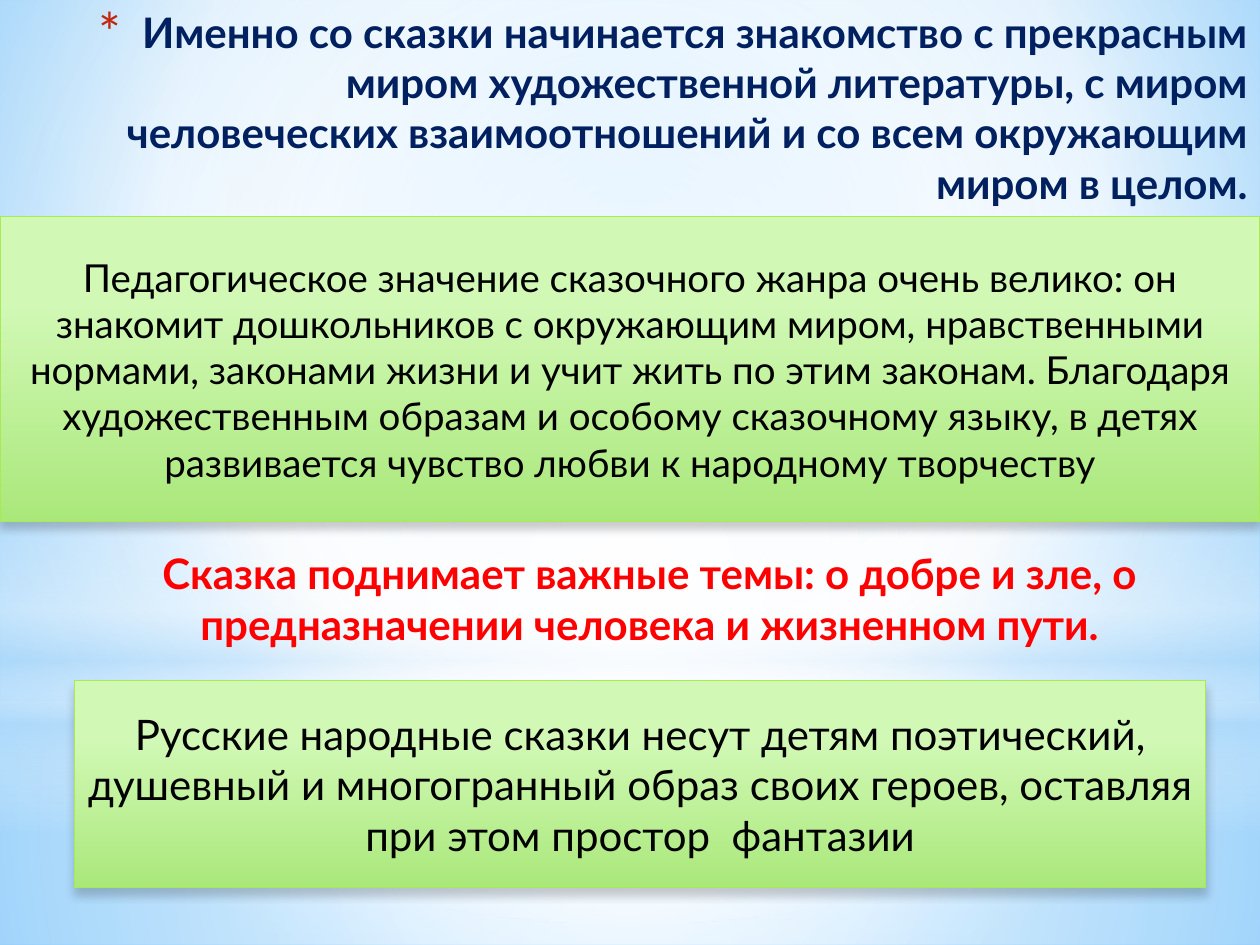
from lxml import etree
from pptx import Presentation
from pptx import util as u
from pptx.dml.color import RGBColor
from pptx.enum import shapes, text
from pptx.oxml.ns import qn

COLORS = {
    "navy": "002060", "red": "FF0000", "black": "000000", "white": "FFFFFF",
    "bullet": "C3260C", "pale": "B4DCFA", "sky": "9ED5FF", "blue": "5BB9FF",
    "green_top": "D1F8B5", "green_bottom": "AAE87B", "green_line": "A7EA52",
}
CENTRE = (50, 50, 50, 50)
WIDTH, HEIGHT = 25.4, 19.05


def add_node(parent, tag, **attributes):
    return etree.SubElement(parent, qn(tag), {k: str(v) for k, v in attributes.items()})


def add_color(parent, name, opacity=100):
    color = add_node(parent, "a:srgbClr", val=COLORS[name])
    if opacity < 100:
        add_node(color, "a:alpha", val=opacity * 1000)


class Deck:
    """Holds the text style and the current slide."""

    font = "Lato"

    def __init__(self, presentation):
        self.slide = presentation.slides.add_slide(presentation.slide_layouts[6])

    def gradient(self, fill, element, stops, focus=None):
        """Radial around focus, or top to bottom without one."""
        fill.gradient()
        gradient = element.find(".//" + qn("a:gradFill"))
        for child in list(gradient):
            gradient.remove(child)
        stop_list = add_node(gradient, "a:gsLst")
        for position, name, *opacity in stops:
            add_color(add_node(stop_list, "a:gs", pos=position * 1000), name, *opacity)
        if focus:
            circle = add_node(gradient, "a:path", path="circle")
            add_node(circle, "a:fillToRect",
                     **{side: value * 1000 for side, value in zip("ltrb", focus)})
        else:
            add_node(gradient, "a:lin", ang=90 * 60000, scaled=0)

    def background(self, stops, focus):
        self.gradient(self.slide.background.fill, self.slide.element, stops, focus)

    def shape(self, box, stops, focus=None, kind=shapes.MSO_SHAPE.RECTANGLE):
        shape = self.slide.shapes.add_shape(kind, *map(u.Cm, box))
        shape.shadow.inherit = False
        shape.line.fill.background()
        self.gradient(shape.fill, shape.element, stops, focus)
        return shape

    def add_words(self, shape, words, size, color, align, bold=False, bullet=False):
        frame = shape.text_frame
        frame.word_wrap = True
        paragraph = frame.paragraphs[0]
        paragraph.alignment = align
        if bullet:
            properties = paragraph._p.get_or_add_pPr()
            properties.set("marL", str(u.Cm(0.89)))
            properties.set("indent", str(u.Cm(-0.89)))
            add_color(add_node(properties, "a:buClr"), "bullet")
            add_node(properties, "a:buSzPct", val=128000)
            add_node(properties, "a:buFont", typeface=self.font)
            add_node(properties, "a:buChar", char="*")
        run = paragraph.add_run()
        run.text = words
        run.font.name = self.font
        run.font.size = u.Pt(size)
        run.font.bold = bold
        run.font.color.rgb = RGBColor.from_string(COLORS[color])

    def heading(self, box, words, color, align, bullet=False):
        shape = self.slide.shapes.add_textbox(*map(u.Cm, box))
        shape.text_frame.vertical_anchor = text.MSO_ANCHOR.TOP
        self.add_words(shape, words, 24, color, align, bold=True, bullet=bullet)

    def panel(self, box, words, size):
        shape = self.shape(box, [(28, "green_top"), (100, "green_bottom")])
        shape.line.color.rgb = RGBColor.from_string(COLORS["green_line"])
        shape.line.width = u.Pt(0.75)
        effects = shape.element.spPr.find(qn("a:effectLst"))
        shadow = add_node(effects, "a:outerShdw", blurRad=u.Pt(5), dist=u.Pt(4),
                          dir=90 * 60000, rotWithShape=0)
        add_color(shadow, "black", 20)
        shape.text_frame.vertical_anchor = text.MSO_ANCHOR.MIDDLE
        self.add_words(shape, words, size, "black", text.PP_ALIGN.CENTER)


def main():
    presentation = Presentation()
    presentation.slide_width, presentation.slide_height = u.Cm(WIDTH), u.Cm(HEIGHT)
    deck = Deck(presentation)

    # Sky backdrop: two halves, a horizon band and a central glow
    horizon = 14.17
    deck.background([(0, "sky"), (60, "white"), (100, "blue")], (20, 10, 20, 60))
    deck.shape((0, horizon, WIDTH, HEIGHT - horizon),
               [(0, "white", 91), (37, "white", 76), (100, "pale", 79)], CENTRE)
    deck.shape((0, 0, WIDTH, horizon),
               [(0, "white", 89), (48, "white", 62), (100, "pale", 79)], CENTRE)
    deck.shape((0, 10.46, WIDTH, 6.35),
               [(0, "white", 0), (29, "white", 30), (45, "pale", 40),
                (55, "white", 26), (65, "pale", 60), (100, "white", 0)])
    deck.shape((0, 4.45, WIDTH, horizon), [(0, "white"), (56, "white", 0)],
               CENTRE, shapes.MSO_SHAPE.OVAL)

    # Title
    deck.heading((0.58, 0, 24.82, 3.76),
                 "Именно со сказки начинается знакомство с прекрасным миром "
                 "художественной литературы, с миром человеческих взаимоотношений "
                 "и со всем окружающим миром в целом.",
                 "navy", text.PP_ALIGN.RIGHT, bullet=True)

    # Green panels and the red statement between them
    deck.panel((0, 4.37, WIDTH, 6.15),
               "Педагогическое значение сказочного жанра очень велико: он знакомит "
               "дошкольников с окружающим миром, нравственными нормами, законами "
               "жизни и учит жить по этим законам. Благодаря художественным образам "
               "и особому сказочному языку, в детях развивается чувство любви "
               "к народному творчеству", 22)
    deck.heading((1.78, 10.92, 22.63, 2.31),
                 "Сказка поднимает важные темы: о добре и зле, о предназначении "
                 "человека и жизненном пути.", "red", text.PP_ALIGN.CENTER)
    deck.panel((1.5, 13.72, 22.81, 4.17),
               "Русские народные сказки несут детям поэтический, душевный "
               "и многогранный образ своих героев, оставляя при этом "
               "простор  фантазии", 24)

    presentation.save("out.pptx")


if __name__ == "__main__":
    main()
